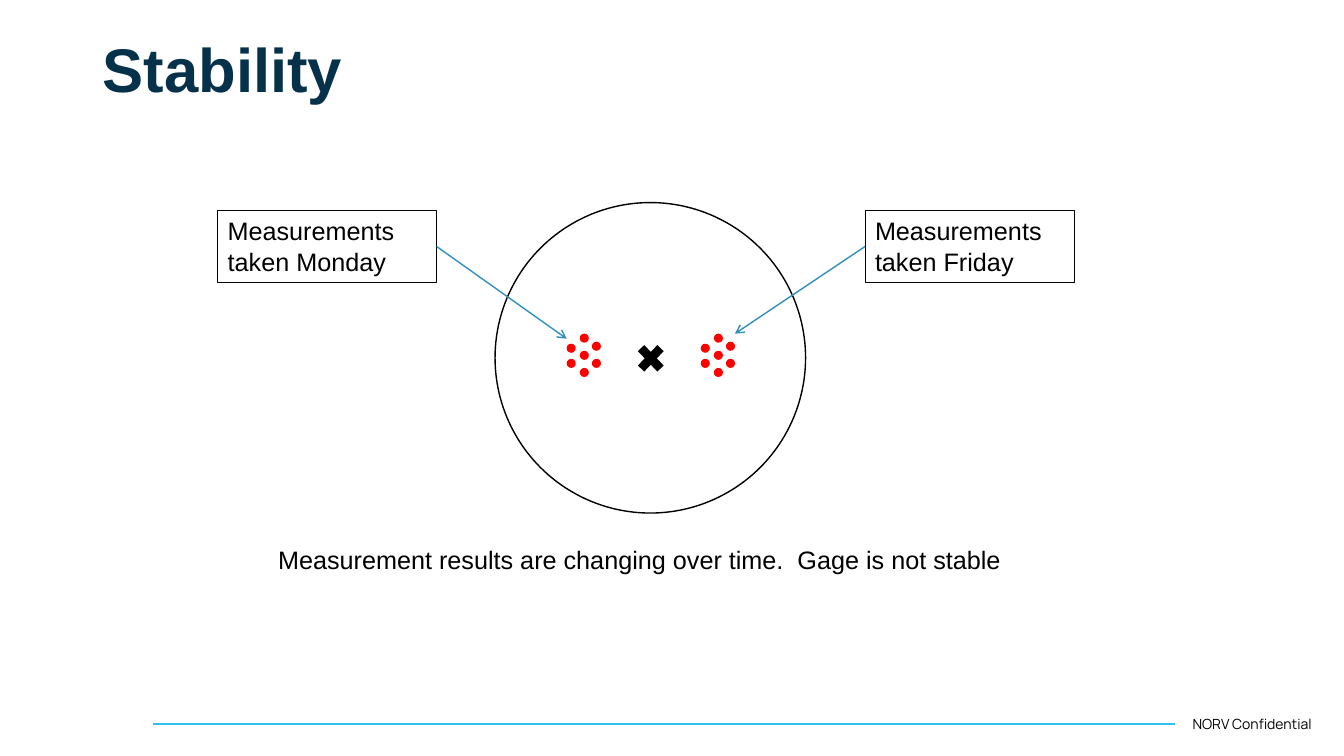
from lxml import etree
from pptx import Presentation
from pptx import util as u
from pptx.dml.color import RGBColor
from pptx.enum import shapes, text
from pptx.oxml import ns

NAVY = RGBColor(0x05, 0x31, 0x4A)
CYAN = RGBColor(0x30, 0xBF, 0xEF)
BLUE = RGBColor(0x2F, 0x90, 0xC0)
RED = RGBColor(0xFF, 0x00, 0x00)
BLACK = RGBColor(0x00, 0x00, 0x00)

TITLE = "Stability"
CONCLUSION = "Measurement results are changing over time.  Gage is not stable"
FOOTER = "NORV Confidential"
DOT_SIZE = 0.09
DOT_OFFSETS = [(0, 0.10), (0, 0.25), (0.25, 0.25), (0.25, 0.08),
               (0.13, 0.17), (0.13, 0.34), (0.13, 0)]
CLUSTERS = [(5.62, 3.31), (6.95, 3.31)]
TARGET = (4.91, 2.01, 3.08, 3.08)
TRUE_VALUE = (6.27, 3.36, 0.37, 0.39)
CALLOUTS = [
    ("Measurements taken Monday", (2.16, 2.09, 2.17, 0.71), 3, (5.62, 3.36)),
    ("Measurements taken Friday", (8.58, 2.09, 2.08, 0.71), 1, (7.29, 3.31)),
]


def inches(lengths):
    return [u.Inches(length) for length in lengths]


def write(holder, words, size=18, font="Arial", color=BLACK, bold=False,
          anchor=text.MSO_ANCHOR.TOP, spacing=None, wrap=True):
    frame = holder.text_frame
    frame.word_wrap = wrap
    frame.auto_size = text.MSO_AUTO_SIZE.NONE
    frame.vertical_anchor = anchor
    paragraph = frame.paragraphs[0]
    paragraph.alignment = text.PP_ALIGN.LEFT
    paragraph.line_spacing = spacing
    run = paragraph.add_run()
    run.text = words
    run.font.size = u.Pt(size)
    run.font.name = font
    run.font.bold = bold
    run.font.color.rgb = color


def draw(parent, kind, box, fill=None, width=None):
    figure = parent.add_shape(kind, *inches(box))
    figure.shadow.inherit = False
    if fill is None:
        figure.fill.background()
    else:
        figure.fill.solid()
        figure.fill.fore_color.rgb = fill
    if width is None:
        figure.line.fill.background()
    else:
        figure.line.color.rgb = BLACK
        figure.line.width = u.Pt(width)
    return figure


def connect(parent, start, end, color, width, arrow=False):
    connector = parent.add_connector(shapes.MSO_CONNECTOR.STRAIGHT, *inches(start + end))
    connector.line.color.rgb = color
    connector.line.width = u.Pt(width)
    properties = connector._element.spPr
    if arrow:
        etree.SubElement(properties.find(ns.qn("a:ln")), ns.qn("a:tailEnd"), type="arrow")
    etree.SubElement(properties, ns.qn("a:effectLst"))
    return connector


def main():
    deck = Presentation()
    deck.slide_width, deck.slide_height = inches((13.33, 7.5))
    slide = deck.slides.add_slide(deck.slide_layouts[5])
    canvas = slide.shapes

    connect(canvas, (1.52, 7.18), (11.65, 7.18), CYAN, 1.5)
    footer = canvas.add_textbox(*inches((11.73, 7.05, 1.48, 0.27)))
    write(footer, FOOTER, size=10, font="Manrope")

    title = canvas.title
    title.left, title.top, title.width, title.height = inches((0.92, 0.28, 11.5, 0.88))
    write(title, TITLE, size=44, color=NAVY, bold=True,
          anchor=text.MSO_ANCHOR.MIDDLE, spacing=0.9)

    for left, top in CLUSTERS:
        cluster = canvas.add_group_shape().shapes
        for dx, dy in DOT_OFFSETS:
            draw(cluster, shapes.MSO_SHAPE.FLOWCHART_CONNECTOR,
                 (left + dx, top + dy, DOT_SIZE, DOT_SIZE), fill=RED)

    gauge = canvas.add_group_shape().shapes
    draw(gauge, shapes.MSO_SHAPE.MATH_MULTIPLY, TRUE_VALUE, fill=BLACK)
    draw(gauge, shapes.MSO_SHAPE.FLOWCHART_CONNECTOR, TARGET, width=1)

    for words, box, side, tip in CALLOUTS:
        callout = draw(canvas, shapes.MSO_SHAPE.RECTANGLE, box, width=0.75)
        write(callout, words)
        left, top, width, height = box
        start = (left + width if side == 3 else left, top + height / 2)
        arrow = connect(canvas, start, tip, BLUE, 1, arrow=True)
        arrow.begin_connect(callout, side)

    conclusion = canvas.add_textbox(*inches((2.66, 5.35, 7.44, 0.4)))
    write(conclusion, CONCLUSION, wrap=False)

    deck.save("out.pptx")


if __name__ == "__main__":
    main()
